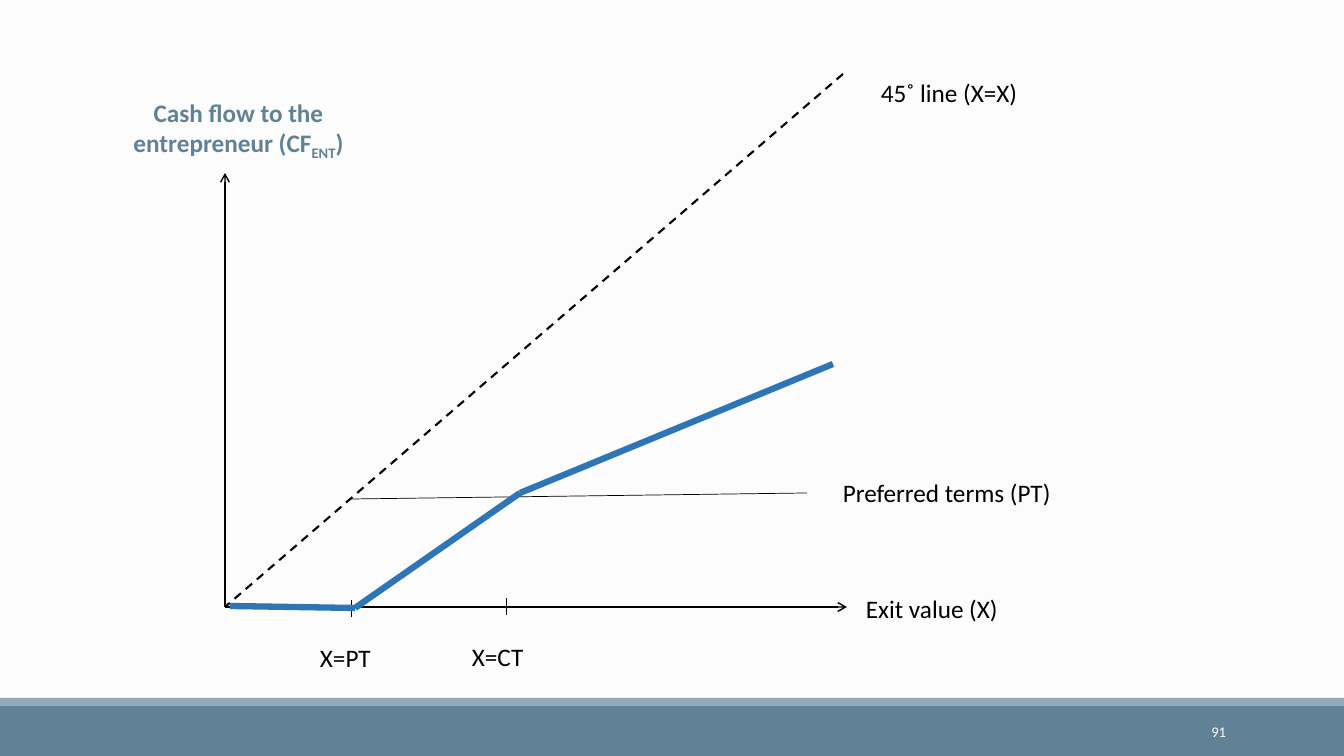
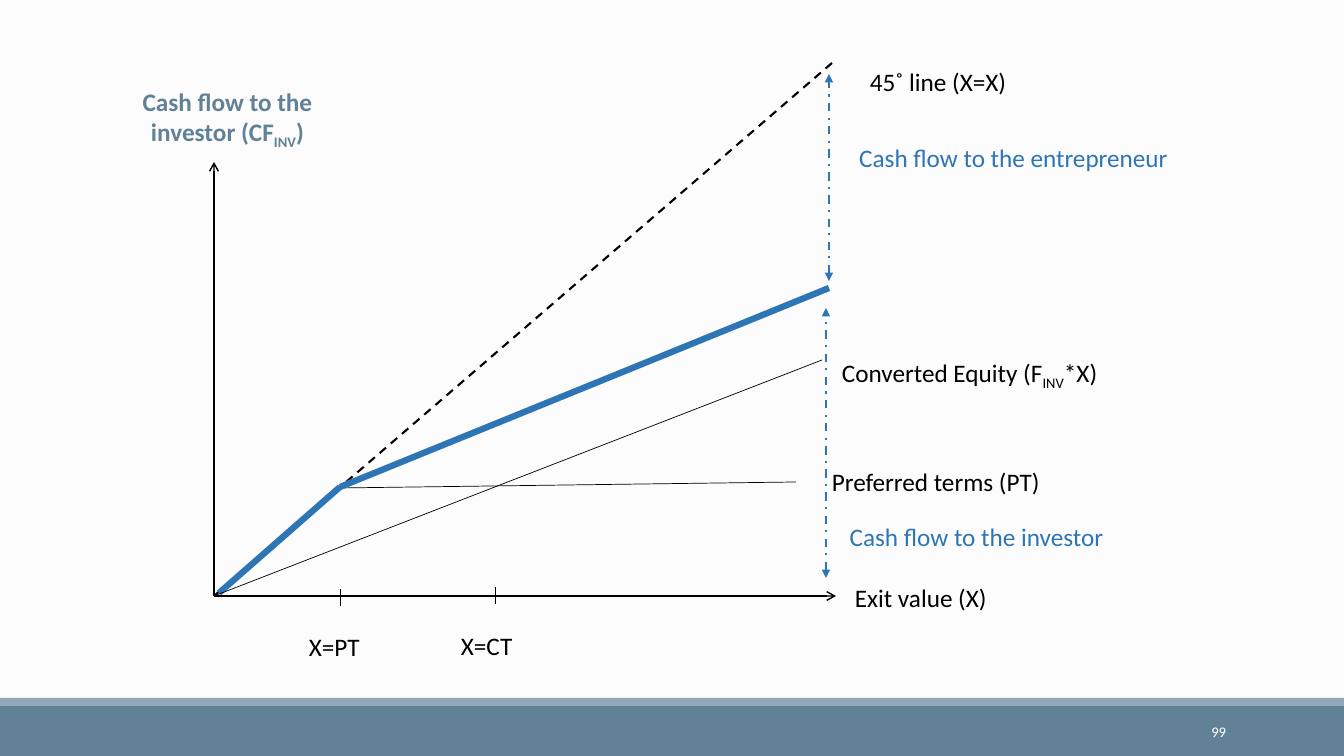
"""Build two payoff diagrams for an entrepreneur and an investor."""
from itertools import pairwise

from lxml.etree import SubElement
from pptx import Presentation
from pptx.dml.color import RGBColor
from pptx.enum.dml import MSO_LINE
from pptx.enum.shapes import MSO_CONNECTOR, MSO_SHAPE
from pptx.enum.text import MSO_ANCHOR, PP_ALIGN
from pptx.oxml.ns import qn
from pptx.util import Emu, Pt

EMU_PER_PX = 914400 / 100.8
SLIDE_WIDTH, SLIDE_HEIGHT = 1344, 756
FONT_NAME = "Calibri"
PAPER = RGBColor(0xFC, 0xFC, 0xFC)
SLATE = RGBColor(0x61, 0x81, 0x97)
LIGHT_SLATE = RGBColor(0x92, 0xA9, 0xB9)
BLUE = RGBColor(0x2E, 0x75, 0xB6)
BLACK = RGBColor(0, 0, 0)
WHITE = RGBColor(0xFF, 0xFF, 0xFF)
TERMS_X, CONVERSION_X = 126, 281


def px(length):
    """Turn pixels into EMU."""
    return Emu(round(length * EMU_PER_PX))


def add_band(slide, top, height, color):
    """Draw a full-width band."""
    band = slide.shapes.add_shape(
        MSO_SHAPE.RECTANGLE, 0, px(top), px(SLIDE_WIDTH), px(height))
    band.shadow.inherit = False
    band.fill.solid()
    band.fill.fore_color.rgb = color
    band.line.fill.background()


def add_text(slide, box, parts, color=BLACK, size=18, bold=False,
             align=PP_ALIGN.LEFT, anchor=MSO_ANCHOR.TOP):
    """Write text in a box; every second part is a subscript."""
    frame = slide.shapes.add_textbox(*map(px, box)).text_frame
    frame.word_wrap = True
    frame.vertical_anchor = anchor
    paragraph = frame.paragraphs[0]
    paragraph.alignment = align
    paragraph.font.name = FONT_NAME
    paragraph.font.size = Pt(size)
    paragraph.font.bold = bold
    paragraph.font.color.rgb = color
    for index, part in enumerate(parts):
        run = paragraph.add_run()
        run.text = part
        if index % 2:
            run._r.get_or_add_rPr().set("baseline", "-25000")


def add_footer(slide, number):
    """Draw the bottom bands and the slide number."""
    add_band(slide, 706, 50, SLATE)
    add_band(slide, 698, 8, LIGHT_SLATE)
    add_text(slide, (1092, 712, 144, 40), [number], WHITE, 10.5,
             align=PP_ALIGN.RIGHT, anchor=MSO_ANCHOR.MIDDLE)


class Plot:
    """A diagram whose parts are placed relative to its origin."""

    def __init__(self, slide, left, top):
        """Keep the slide and the origin."""
        self.slide, self.left, self.top = slide, left, top

    def line(self, start, end, width=0.5, color=BLACK, dash=None, head=None, tail=None):
        """Draw a straight line with optional arrowheads."""
        connector = self.slide.shapes.add_connector(
            MSO_CONNECTOR.STRAIGHT,
            px(self.left + start[0]), px(self.top + start[1]),
            px(self.left + end[0]), px(self.top + end[1]))
        connector.line.color.rgb = color
        connector.line.width = Pt(width)
        if dash:
            connector.line.dash_style = dash
        outline = connector.line._get_or_add_ln()
        for tag, kind in (("a:headEnd", head), ("a:tailEnd", tail)):
            if kind:
                SubElement(outline, qn(tag), type=kind)
        SubElement(connector._element.spPr, qn("a:effectLst"))

    def label(self, left, top, width, *parts, height=40, **style):
        """Write a label."""
        box = (self.left + left, self.top + top, width, height)
        add_text(self.slide, box, parts, **style)

    def payoff(self, points):
        """Draw the thick payoff line through the points."""
        for start, end in pairwise(points):
            self.line(start, end, 4.5, BLUE)

    def share(self, x, bottom, top):
        """Draw a two-headed arrow that measures a share."""
        self.line((x, bottom), (x, top), 1.5, BLUE, MSO_LINE.DASH_DOT,
                  "triangle", "triangle")

    def frame(self, party, subscript):
        """Draw the axes, ticks, reference lines and common labels."""
        self.line((0, -434), (0, 0), 1, head="arrow")
        self.line((622, 0), (0, 0), 1, head="arrow")
        self.line((618, -533), (0, 0), 1.5, dash=MSO_LINE.DASH)
        self.line((582, -114), (TERMS_X, -108))
        self.line((TERMS_X, 10), (TERMS_X, -7))
        self.line((CONVERSION_X, 8), (CONVERSION_X, -9))
        self.label(-117, -515, 261, f"Cash flow to the {party} (CF", subscript, ")",
                   height=72, color=SLATE, bold=True, align=PP_ALIGN.CENTER)
        self.label(608, -135, 232, "Preferred terms (PT)")
        self.label(646, -535, 331, "45˚ line (X=X)")
        self.label(85, 30, 82, "X=PT")
        self.label(237, 29, 120, "X=CT")
        self.label(631, -19, 222, "Exit value (X)")


def add_plot_slide(presentation, number, left, top, party, subscript):
    """Add a slide with its footer and plot frame."""
    slide = presentation.slides.add_slide(presentation.slide_layouts[6])
    add_footer(slide, number)
    plot = Plot(slide, left, top)
    plot.frame(party, subscript)
    return plot


def add_entrepreneur_slide(presentation):
    """Add the entrepreneur's payoff."""
    plot = add_plot_slide(presentation, "91", 225, 607, "entrepreneur", "ENT")
    plot.payoff([(5, -1), (130, 1), (295, -114), (608, -243)])


def add_investor_slide(presentation):
    """Add the investor's payoff and the two shares."""
    plot = add_plot_slide(presentation, "99", 214, 596, "investor", "INV")
    plot.label(618, -244, 331, "Converted Equity (F", "INV", "*X)")
    plot.share(612, -18, -288)
    plot.share(615, -315, -522)
    plot.payoff([(5, -3), (TERMS_X, -109), (615, -308)])
    plot.label(627, -459, 345, "Cash flow to the entrepreneur",
               color=BLUE, align=PP_ALIGN.CENTER)
    plot.label(621, -80, 283, "Cash flow to the investor",
               color=BLUE, align=PP_ALIGN.CENTER)
    plot.line((608, -236), (0, 0))


def main():
    """Build and save the presentation."""
    presentation = Presentation()
    presentation.slide_width = px(SLIDE_WIDTH)
    presentation.slide_height = px(SLIDE_HEIGHT)
    background = presentation.slide_master.background.fill
    background.solid()
    background.fore_color.rgb = PAPER
    add_entrepreneur_slide(presentation)
    add_investor_slide(presentation)
    presentation.save("out.pptx")


if __name__ == "__main__":
    main()
